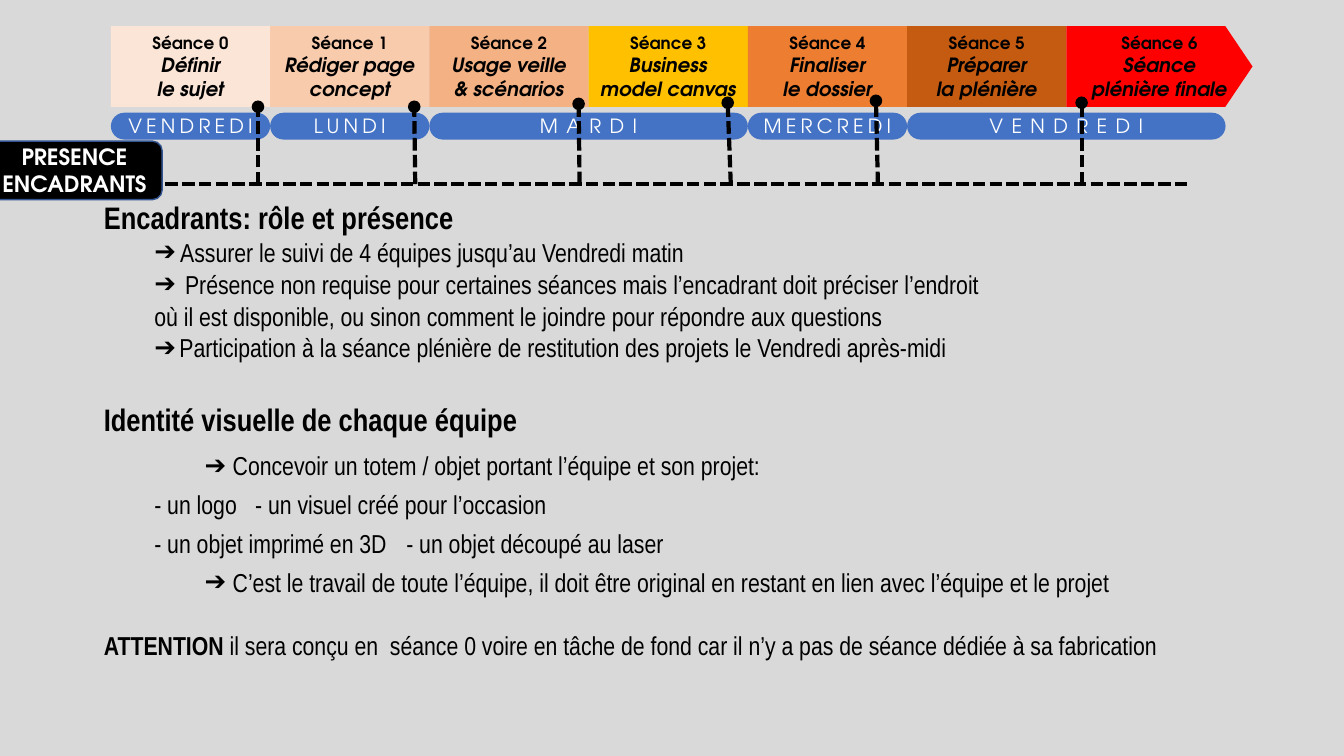
from lxml import etree
from pptx import Presentation
from pptx.dml.color import RGBColor
from pptx.enum.dml import MSO_LINE
from pptx.enum.shapes import MSO_CONNECTOR, MSO_SHAPE
from pptx.enum.text import MSO_ANCHOR, MSO_AUTO_SIZE, PP_ALIGN
from pptx.oxml.ns import qn
from pptx.util import Pt

RECTANGLE, ROUNDED = MSO_SHAPE.RECTANGLE, MSO_SHAPE.ROUNDED_RECTANGLE
STRAIGHT, DASH = MSO_CONNECTOR.STRAIGHT, MSO_LINE.SQUARE_DOT
MIDDLE, TOP = MSO_ANCHOR.MIDDLE, MSO_ANCHOR.TOP
CENTER, LEFT = PP_ALIGN.CENTER, PP_ALIGN.LEFT


def colour(value):
    return RGBColor.from_string(value)


def add_text(para, text, font, size, ink="000000", bold=False, italic=False, spacing=0):
    span = para.add_run()
    span.text = text
    span.font.name = font
    span.font.size = Pt(size)
    span.font.bold = bold
    span.font.italic = italic
    span.font.color.rgb = colour(ink)
    if spacing:
        span.font._element.set("spc", str(spacing * 100))


class Page:
    label_font = "TeX Gyre Adventor"
    body_font = "Arial Narrow"
    body_size = 18.5

    def __init__(self, deck, background):
        self.slide = deck.slides.add_slide(deck.slide_layouts[1])
        self.slide.background.fill.solid()
        self.slide.background.fill.fore_color.rgb = colour(background)
        title = self.slide.shapes.title
        title._element.getparent().remove(title._element)

    def label(self, box, fill, lines, border=None, margin=7.2, wrap=True):
        """Fill a box and centre its lines, each a text with its format."""
        box.shadow.inherit = False
        box.fill.solid()
        box.fill.fore_color.rgb = colour(fill)
        if border:
            box.line.color.rgb = colour(border)
            box.line.width = Pt(1)
        else:
            box.line.fill.background()
        frame = box.text_frame
        frame.word_wrap = wrap
        frame.vertical_anchor = MIDDLE
        frame.margin_left = frame.margin_right = Pt(margin)
        frame.margin_top = frame.margin_bottom = Pt(margin / 2)
        for number, (text, style) in enumerate(lines):
            para = frame.add_paragraph() if number else frame.paragraphs[0]
            para.alignment = CENTER
            add_text(para, text, self.label_font, **style)

    def block(self, kind, left, top, width, height, fill, lines, rounding=None, **style):
        box = self.slide.shapes.add_shape(kind, Pt(left), Pt(top), Pt(width), Pt(height))
        if rounding is not None:
            box.adjustments[0] = rounding
        self.label(box, fill, lines, **style)

    def arrow_block(self, left, top, width, height, tip, fill, lines):
        right, bottom = left + width, top + height
        builder = self.slide.shapes.build_freeform(Pt(left), Pt(top))
        corners = [(right - tip, top), (right, top + height / 2),
                   (right - tip, bottom), (left, bottom)]
        builder.add_line_segments([(Pt(x), Pt(y)) for x, y in corners])
        self.label(builder.convert_to_shape(), fill, lines)

    def dashed_line(self, x1, y1, x2, y2, dot=False):
        line = self.slide.shapes.add_connector(STRAIGHT, Pt(x1), Pt(y1), Pt(x2), Pt(y2))
        line.line.color.rgb = colour("000000")
        line.line.width = Pt(3)
        line.line.dash_style = DASH
        if dot:
            etree.SubElement(line.line._ln, qn("a:tailEnd"), type="oval")
        etree.SubElement(line._element.spPr, qn("a:effectLst"))

    def body(self, left, top, width, height, paragraphs):
        box = self.slide.placeholders[1]
        box.left, box.top, box.width, box.height = Pt(left), Pt(top), Pt(width), Pt(height)
        frame = box.text_frame
        frame.word_wrap = True
        frame.auto_size = MSO_AUTO_SIZE.NONE
        frame.vertical_anchor = TOP
        for number, (spans, layout) in enumerate(paragraphs):
            para = frame.add_paragraph() if number else frame.paragraphs[0]
            self.body_layout(para, **layout)
            for text, style in spans:
                add_text(para, text, self.body_font, **{"size": self.body_size, **style})

    def body_layout(self, para, before=10, indent=0, hang=0, level=0, stops=()):
        para.level = level
        para.alignment = LEFT
        para.line_spacing = 0.8
        para.space_before, para.space_after = Pt(before), Pt(0)
        properties = para._p.get_or_add_pPr()
        properties.set("marL", str(Pt(indent + hang)))
        properties.set("indent", str(Pt(-hang)))
        if hang:
            etree.SubElement(properties, qn("a:buChar"), char="➔")
        else:
            etree.SubElement(properties, qn("a:buNone"))
        if stops:
            tabs = etree.SubElement(properties, qn("a:tabLst"))
            for stop in stops:
                etree.SubElement(tabs, qn("a:tab"), pos=str(Pt(stop)), algn="l")


def main():
    deck = Presentation()
    deck.slide_width, deck.slide_height = Pt(960), Pt(540)
    page = Page(deck, "D9D9D9")

    # Role and identity text
    heading = {"size": 22.2, "bold": True}
    role = {"before": 5, "indent": 36, "level": 1}
    columns = {"stops": (144, 360)}
    page.body(67, 143.3, 828, 406, [
        ([("Encadrants: rôle et présence", heading)], {}),
        ([("Assurer le suivi de 4 équipes jusqu’au Vendredi matin", {})],
         {**role, "hang": 18.5}),
        ([("Présence non requise pour certaines séances mais l’encadrant doit "
           "préciser l’endroit", {})], {**role, "hang": 22}),
        ([("où il est disponible, ou sinon comment le joindre pour répondre "
           "aux questions", {})], role),
        ([("Participation à la séance plénière de restitution des projets le "
           "Vendredi après-midi", {})], {**role, "hang": 18}),
        ([("Identité visuelle de chaque équipe", heading)], {"before": 32}),
        ([("Concevoir un totem / objet portant l’équipe et son projet:", {})],
         {"before": 13, "indent": 72, "hang": 20}),
        ([("\t- un logo\t- un visuel créé pour l’occasion", {})], columns),
        ([("\t- un objet imprimé en 3D\t- un objet découpé au laser", {})], columns),
        ([("C’est le travail de toute l’équipe, il doit être original en restant "
           "en lien avec l’équipe et le projet", {})], {"indent": 72, "hang": 20}),
        ([("ATTENTION", {"bold": True}),
          (" il sera conçu en  séance 0 voire en tâche de fond car il n’y a pas "
           "de séance dédiée à sa fabrication", {})], {"before": 27}),
    ])

    # Session blocks
    start, step, top, height = 79.2, 113.75, 18.7, 57.6
    sessions = [
        ("FBE5D6", ["Définir", "le sujet"]),
        ("F8CBAD", ["Rédiger page concept"]),
        ("F4B183", ["Usage veille", "& scénarios"]),
        ("FFC000", ["Business model canvas"]),
        ("ED7D31", ["Finaliser", "le dossier"]),
        ("C55A11", ["Préparer", "la plénière"]),
        ("FF0000", ["Séance", "plénière finale"]),
    ]
    for number, (fill, topic) in enumerate(sessions):
        lines = [(f"Séance {number}", {"size": 12, "bold": True})]
        lines += [(text, {"size": 14, "bold": True, "italic": True}) for text in topic]
        left = start + number * step
        if number < len(sessions) - 1:
            page.block(RECTANGLE, left, top, step, height, fill, lines)
        else:
            page.arrow_block(left, top, 133, height, 19.4, fill, lines)

    # Day pills: first session, number of sessions, day
    days = [(0, 1, "VENDREDI"), (1, 1, "LUNDI"), (2, 2, "MARDI"),
            (4, 1, "MERCREDI"), (5, 2, "VENDREDI")]
    for first, count, day in days:
        style = {"size": 14, "ink": "FFFFFF", "spacing": 3 * count}
        page.block(ROUNDED, start + first * step, 80.5, count * step, 19.2, "4472C4",
                   [(day, style)], rounding=0.5, margin=0, wrap=False)

    # Supervisor presence
    presence = {"size": 16, "ink": "FFFFFF", "bold": True}
    page.block(ROUNDED, -9.4, 100.8, 125.3, 41.8, "000000",
               [("PRESENCE", presence), ("ENCADRANTS", presence)], border="325491")
    base = 131.6
    page.dashed_line(118, base, 849.6, base)
    markers = [(184.3, 184.3, 76.3), (296.6, 295.9, 76.3), (414, 413.3, 74.2),
               (522, 519.8, 73.4), (627.1, 625.7, 72), (772.6, 772.6, 73.4)]
    for foot, head, head_top in markers:
        page.dashed_line(foot, base, head, head_top, dot=True)

    deck.save("out.pptx")


if __name__ == "__main__":
    main()
